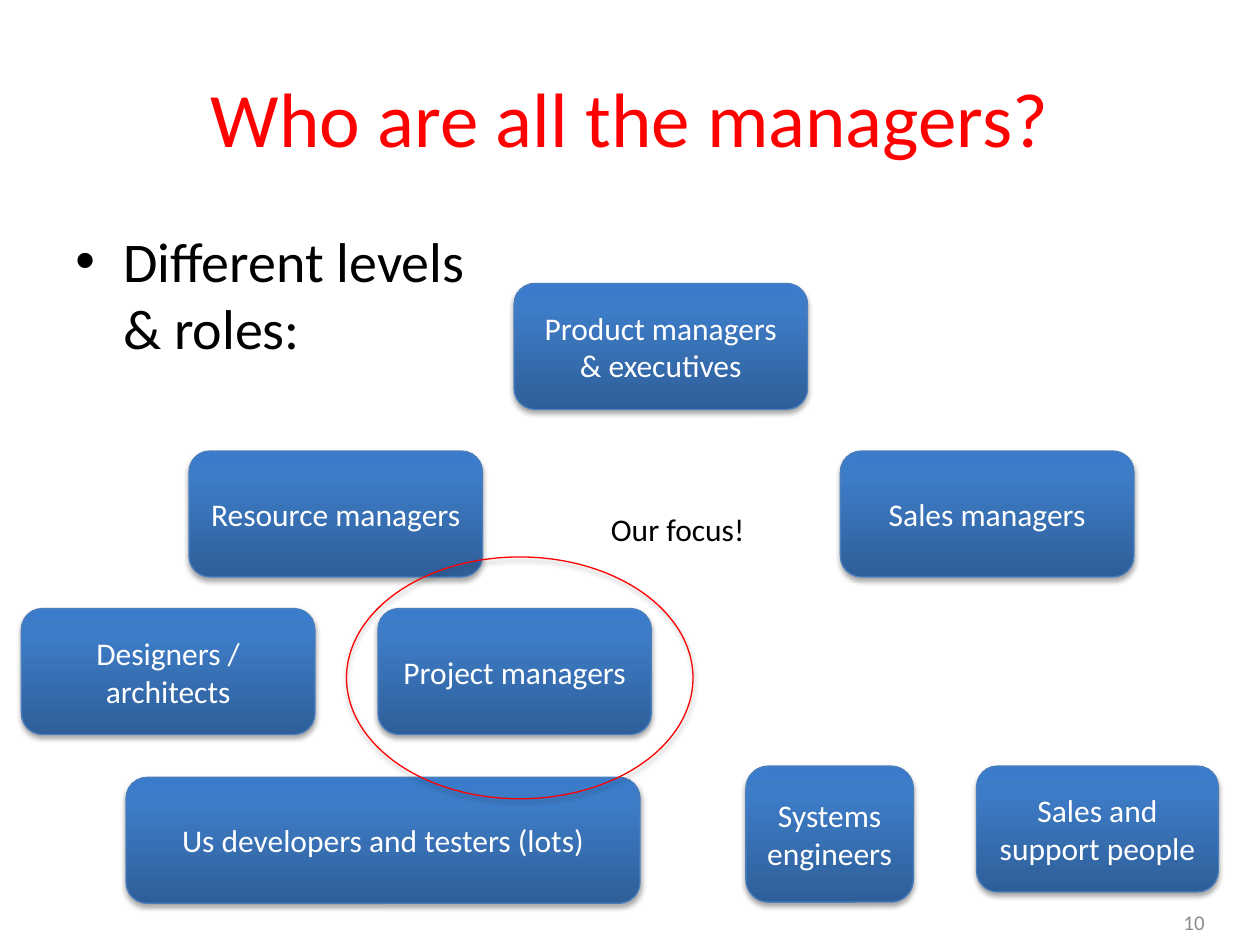
from copy import deepcopy

from pptx import Presentation
from pptx.dml.color import RGBColor
from pptx.enum.shapes import MSO_SHAPE as Kind
from pptx.enum.text import MSO_ANCHOR as Anchor, PP_ALIGN as Align
from pptx.oxml import parse_xml
from pptx.oxml.ns import nsdecls, qn
from pptx.util import Inches, Pt

HEX = {
    "title": "FF0000", "text": "000000", "label": "FFFFFF", "page": "8C8C8C",
    "edge": "4B7EBC", "ring": "FF0000", "shade": "000000",
}
GRAD = [(0, "2F5F99"), (0.8, "3D7CC7"), (1, "3A7CCB")]

ROLES = [
    ("Us developers and testers (lots)", 1, 6.17, 4.08, 1),
    ("Project managers", 3, 4.83, 2.17, 1),
    ("Designers / architects", 0.17, 4.83, 2.33, 1),
    ("Resource managers", 1.5, 3.58, 2.33, 1),
    ("Systems engineers", 5.92, 6.08, 1.33, 1.08),
    ("Sales and support people", 7.75, 6.08, 1.92, 1),
    ("Sales managers", 6.67, 3.58, 2.33, 1),
    ("Product managers & executives", 4.08, 2.25, 2.33, 1),
]


class Deck:
    """Holds the style and the current slide."""

    def __init__(self, slide, font="Calibri"):
        self.slide = slide
        self.font = font

    def label(self, frame, text, size, color, align):
        frame.text = text
        para = frame.paragraphs[0]
        para.alignment = align
        for run in para.runs:
            run.font.name = self.font
            run.font.size = Pt(size)
            run.font.color.rgb = RGBColor.from_string(HEX[color])
        return para

    def text(self, text, at, size, color, align=Align.LEFT,
             anchor=Anchor.TOP, wrap=True):
        box = self.slide.shapes.add_textbox(*map(Inches, at))
        frame = box.text_frame
        frame.word_wrap = wrap
        frame.vertical_anchor = anchor
        return self.label(frame, text, size, color, align)

    def bullet(self, text, at, size, color):
        para = self.text(text, at, size, color)
        props = para._p.get_or_add_pPr()
        props.set("marL", str(Inches(0.38)))
        props.set("indent", str(-Inches(0.38)))
        props.append(parse_xml(f'<a:buFont {nsdecls("a")} typeface="Arial"/>'))
        props.append(parse_xml(f'<a:buChar {nsdecls("a")} char="•"/>'))

    def shape(self, kind, at, edge):
        """Add a preset shape with a thin line and a soft shadow below."""
        item = self.slide.shapes.add_shape(kind, *map(Inches, at))
        item.line.color.rgb = RGBColor.from_string(HEX[edge])
        item.line.width = Pt(0.75)
        item.shadow.inherit = False
        item._element.spPr.find(qn("a:effectLst")).append(parse_xml(
            f'<a:outerShdw {nsdecls("a")} blurRad="{Pt(3.1)}" dist="{Pt(1.8)}" '
            f'dir="5400000" rotWithShape="0"><a:srgbClr val="{HEX["shade"]}">'
            '<a:alpha val="35000"/></a:srgbClr></a:outerShdw>'))
        return item

    def role(self, text, *at):
        item = self.shape(Kind.ROUNDED_RECTANGLE, at, "edge")
        item.fill.gradient()
        item.fill.gradient_angle = 90
        stops = item._element.spPr.find(qn("a:gradFill")).find(qn("a:gsLst"))
        stops.append(deepcopy(stops[-1]))
        for stop, (pos, color) in zip(item.fill.gradient_stops, GRAD):
            stop.position = pos
            stop.color.rgb = RGBColor.from_string(color)
        frame = item.text_frame
        frame.word_wrap = True
        frame.vertical_anchor = Anchor.MIDDLE
        self.label(frame, text, 18, "label", Align.CENTER)

    def ring(self, *at):
        self.shape(Kind.OVAL, at, "ring").fill.background()


def main():
    prs = Presentation()
    prs.slide_width, prs.slide_height = Inches(10), Inches(7.5)
    deck = Deck(prs.slides.add_slide(prs.slide_layouts[6]))

    deck.text("10", (7.33, 7.12, 2.33, 0.4), 12, "page",
              Align.RIGHT, Anchor.MIDDLE)
    deck.text("Who are all the managers?", (0.5, 0.3, 9, 1.25), 44, "title",
              Align.CENTER, Anchor.MIDDLE)
    deck.bullet("Different levels\v& roles:", (0.5, 1.75, 9, 4.95), 32, "text")
    for role in ROLES:
        deck.role(*role)
    deck.ring(2.75, 4.42, 2.75, 1.92)
    deck.text("Our focus!", (4.75, 4, 1.28, 0.4), 18, "text", wrap=False)

    prs.save("out.pptx")


if __name__ == "__main__":
    main()
